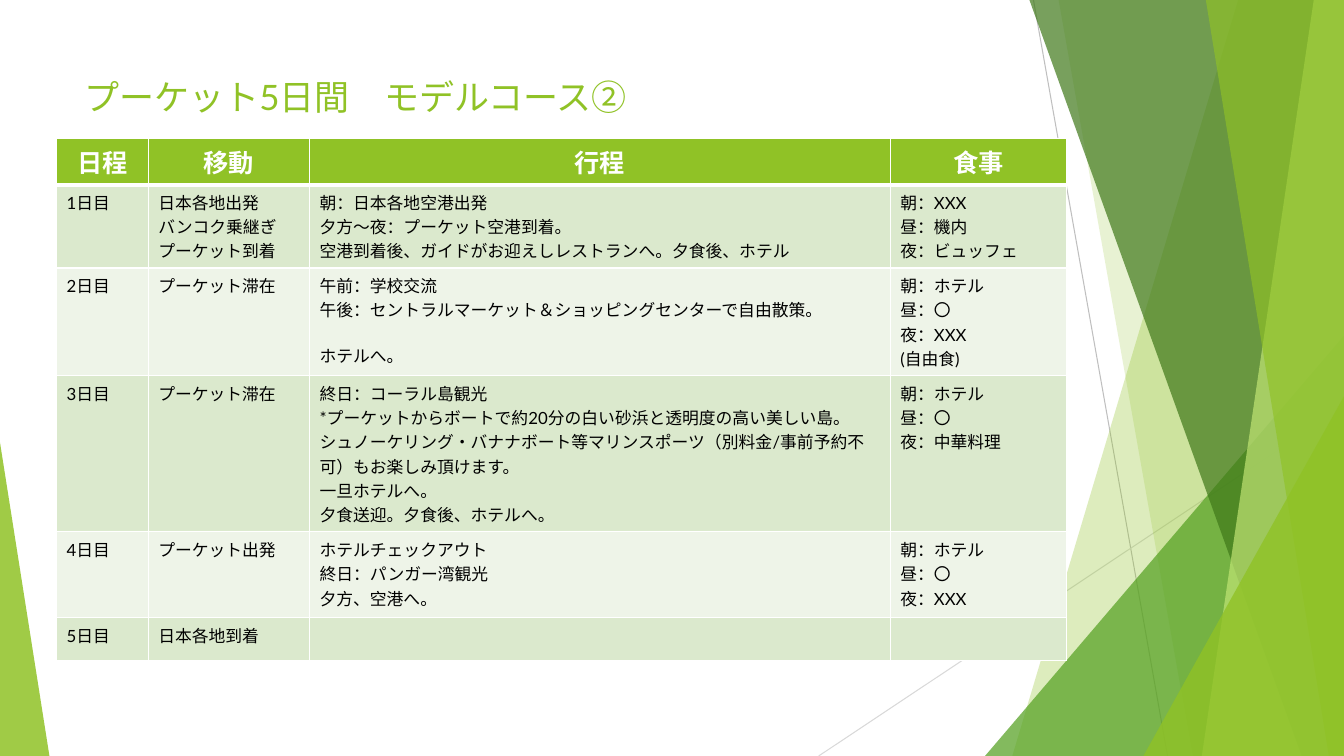
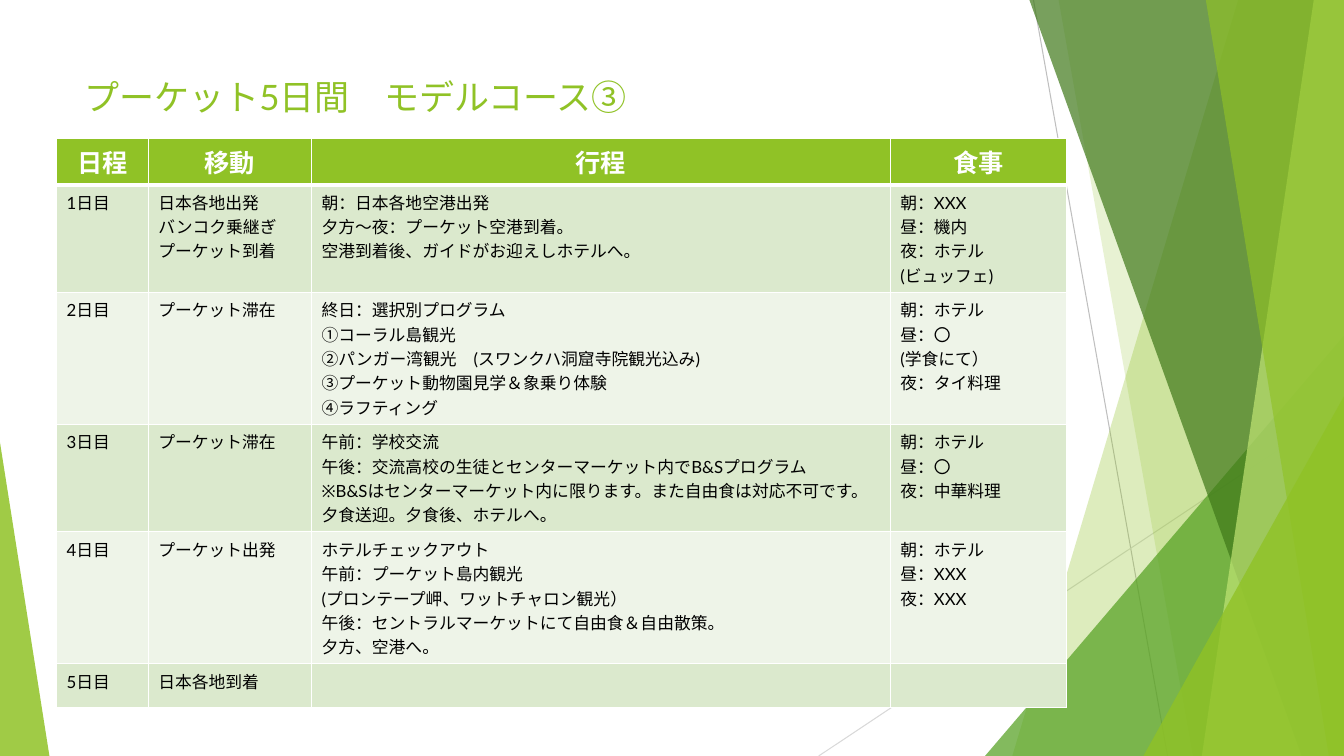
from dataclasses import dataclass

from pptx import Presentation
from pptx.dml.color import RGBColor
from pptx.enum.shapes import MSO_CONNECTOR, MSO_SHAPE
from pptx.enum.text import MSO_ANCHOR, MSO_AUTO_SIZE, PP_ALIGN
from pptx.oxml.ns import qn
from pptx.slide import Slide, SlideLayout
from pptx.util import Emu, Inches, Pt
from lxml import etree

STRAIGHT = MSO_CONNECTOR.STRAIGHT
TRIANGLE = MSO_SHAPE.ISOSCELES_TRIANGLE
MIDDLE = MSO_ANCHOR.MIDDLE
NO_AUTOFIT = MSO_AUTO_SIZE.NONE
LEFT, CENTER = PP_ALIGN.LEFT, PP_ALIGN.CENTER

WHITE = RGBColor(0xFF, 0xFF, 0xFF)
BLACK = RGBColor(0x00, 0x00, 0x00)
LIME = RGBColor(0x90, 0xC2, 0x26)
GREEN = RGBColor(0x54, 0xA0, 0x21)
DARK_GREEN = RGBColor(0x3F, 0x78, 0x19)
PALE_LIME = RGBColor(0xC0, 0xE4, 0x74)
GREY = RGBColor(0xBF, 0xBF, 0xBF)
LIGHT_GREY = RGBColor(0xD9, 0xD9, 0xD9)
ROW_FILLS = (RGBColor(0xDB, 0xE9, 0xCD), RGBColor(0xEE, 0xF4, 0xE8))

FONT = "Lato"
SLIDE_W, SLIDE_H = 13.33, 7.5
TABLE_LEFT, TABLE_TOP = 0.56, 1.37
HEADERS = ("日程", "移動", "行程", "食事")
ROW_HEIGHTS = (0.42, 0.73, 0.75, 0.75, 0.85, 0.43)
GAP = Pt(15)


@dataclass(frozen=True)
class Ray:
    start: tuple[float, float]
    end: tuple[float, float]
    color: RGBColor


@dataclass(frozen=True)
class Band:
    """Full-height band from a slanted left edge to the slide's right edge."""
    top_x: float
    bottom_x: float
    color: RGBColor
    opacity: int


@dataclass(frozen=True)
class Wedge:
    """Right-angled triangle on the slide's bottom edge; apex 0 left, 1 right."""
    left: float
    top: float
    width: float
    apex: int
    color: RGBColor
    opacity: int


@dataclass(frozen=True)
class Day:
    move: str
    plan: str = ""
    meals: str = ""


@dataclass(frozen=True)
class Course:
    title: str
    title_width: float
    columns: tuple[float, ...]
    days: tuple[Day, ...]


BACKDROP = (
    Ray((10.25, 0), (11.58, SLIDE_H), GREY),
    Ray((SLIDE_W, 4.03), (8.12, SLIDE_H), LIGHT_GREY),
    Band(12.28, 10.04, LIME, 30),
    Band(10.5, 11.83, LIME, 20),
    Wedge(9.77, 3.33, 3.56, 1, GREEN, 72),
    Band(10.21, 12.91, DARK_GREEN, 70),
    Band(13.03, 11.92, PALE_LIME, 70),
    Band(11.96, 13.18, LIME, 65),
    Wedge(11.34, 3.93, 1.99, 1, LIME, 80),
    Wedge(0, 4.39, 0.49, 0, LIME, 85),
)

OUTBOUND = "日本各地出発\nバンコク乗継ぎプーケット到着"
STAY = "プーケット滞在"
DEPART = "プーケット出発"
HOME = Day("日本各地到着")
CHINESE_DINNER = "朝：ホテル\n昼：〇\n夜：中華料理"

# A blank line in a text stands for extra space before the next paragraph.
COURSES = (
    Course("プーケット5日間　モデルコース②", 6.43, (0.91, 1.6, 5.76, 1.75), (
        Day(OUTBOUND,
            "朝：日本各地空港出発\n夕方～夜：プーケット空港到着。\n"
            "空港到着後、ガイドがお迎えしレストランへ。夕食後、ホテル",
            "朝：XXX\n昼：機内\n夜：ビュッフェ"),
        Day(STAY,
            "午前：学校交流\n"
            "午後：セントラルマーケット＆ショッピングセンターで自由散策。\n\n"
            "ホテルへ。",
            "朝：ホテル\n昼：〇\n夜：XXX\n(自由食)"),
        Day(STAY,
            "終日：コーラル島観光\n"
            "*プーケットからボートで約20分の白い砂浜と透明度の高い美しい島。\n"
            "シュノーケリング・バナナボート等マリンスポーツ"
            "（別料金/事前予約不可）もお楽しみ頂けます。\n"
            "一旦ホテルへ。\n夕食送迎。夕食後、ホテルへ。",
            CHINESE_DINNER),
        Day(DEPART,
            "ホテルチェックアウト\n終日：パンガー湾観光\n夕方、空港へ。",
            "朝：ホテル\n昼：〇\n夜：XXX"),
        HOME,
    )),
    Course("プーケット5日間　モデルコース③", 9.18, (0.91, 1.62, 5.74, 1.75), (
        Day(OUTBOUND,
            "朝：日本各地空港出発\n夕方～夜：プーケット空港到着。\n"
            "空港到着後、ガイドがお迎えしホテルへ。",
            "朝：XXX\n昼：機内\n夜：ホテル\n(ビュッフェ)"),
        Day(STAY,
            "終日：選択別プログラム\n①コーラル島観光\n"
            "②パンガー湾観光　(スワンクハ洞窟寺院観光込み)\n"
            "③プーケット動物園見学＆象乗り体験\n④ラフティング",
            "朝：ホテル\n昼：〇\n(学食にて）\n夜：タイ料理"),
        Day(STAY,
            "午前：学校交流\n"
            "午後：交流高校の生徒とセンターマーケット内でB&Sプログラム\n"
            "※B&Sはセンターマーケット内に限ります。また自由食は対応不可です。\n"
            "夕食送迎。夕食後、ホテルへ。",
            CHINESE_DINNER),
        Day(DEPART,
            "ホテルチェックアウト\n午前：プーケット島内観光\n"
            "(プロンテープ岬、ワットチャロン観光）\n"
            "午後：セントラルマーケットにて自由食＆自由散策。\n夕方、空港へ。",
            "朝：ホテル\n昼：XXX\n夜：XXX"),
        HOME,
    )),
)


def style_font(font, size: int, color: RGBColor, bold: bool = False) -> None:
    font.name, font.size, font.bold = FONT, Pt(size), bold
    font.color.rgb = color


def tint(sp, color: RGBColor, opacity: int) -> None:
    sp.shadow.inherit = False
    sp.line.fill.background()
    sp.fill.solid()
    sp.fill.fore_color.rgb = color
    clr = sp.element.spPr.find(qn("a:solidFill"))[0]
    etree.SubElement(clr, qn("a:alpha")).set("val", str(opacity * 1000))


def draw_ray(s: Slide, ray: Ray):
    line = s.shapes.add_connector(STRAIGHT, *map(Inches, ray.start + ray.end))
    line.line.color.rgb = ray.color
    line.line.width = Pt(0.75)
    etree.SubElement(line.element.spPr, qn("a:effectLst"))
    return line


def draw_band(s: Slide, band: Band):
    corners = ((SLIDE_W, 0), (SLIDE_W, SLIDE_H), (band.bottom_x, SLIDE_H))
    builder = s.shapes.build_freeform(Inches(band.top_x), 0)
    builder.add_line_segments([(Inches(x), Inches(y)) for x, y in corners])
    sp = builder.convert_to_shape()
    tint(sp, band.color, band.opacity)
    return sp


def draw_wedge(s: Slide, wedge: Wedge):
    sp = s.shapes.add_shape(
        TRIANGLE, Inches(wedge.left), Inches(wedge.top),
        Inches(wedge.width), Inches(SLIDE_H - wedge.top))
    sp.adjustments[0] = wedge.apex
    tint(sp, wedge.color, wedge.opacity)
    return sp


DRAW = {Ray: draw_ray, Band: draw_band, Wedge: draw_wedge}


def add_backdrop(s: Slide, layout: SlideLayout) -> None:
    """Draw the backdrop on a slide, then move it to the shared layout."""
    for number, part in enumerate(BACKDROP, start=101):
        el = DRAW[type(part)](s, part).element
        el.xpath(".//p:cNvPr")[0].set("id", str(number))
        layout.shapes.element.append(el)


def set_title(s: Slide, course: Course) -> None:
    title = s.shapes.title
    title.left, title.top = Inches(0.74), Inches(0.67)
    title.width, title.height = Inches(course.title_width), Inches(0.58)
    tf = title.text_frame
    tf.text = course.title
    tf.auto_size, tf.vertical_anchor = NO_AUTOFIT, MIDDLE
    p = tf.paragraphs[0]
    p.alignment = LEFT
    style_font(p.font, 25, LIME)


def add_borders(cell, bottom: int) -> None:
    tc_pr = cell._tc.get_or_add_tcPr()
    for side, width in (("L", 1), ("R", 1), ("T", 1), ("B", bottom)):
        ln = etree.SubElement(tc_pr, qn(f"a:ln{side}"), w=str(Pt(width)))
        fill = etree.SubElement(ln, qn("a:solidFill"))
        etree.SubElement(fill, qn("a:srgbClr"), val=str(WHITE))


def fill_cell(cell, text: str, row: int) -> None:
    header = row == 0
    add_borders(cell, 3 if header else 1)
    cell.fill.solid()
    cell.fill.fore_color.rgb = LIME if header else ROW_FILLS[(row - 1) % 2]
    tf = cell.text_frame
    p = tf.paragraphs[0]
    for block_no, block in enumerate(text.split("\n\n")):
        for line_no, line in enumerate(block.split("\n")):
            if block_no or line_no:
                p = tf.add_paragraph()
            if block_no and not line_no:
                p.space_before = GAP
            p.text = line
            if header:
                p.alignment = CENTER
                style_font(p.font, 18, WHITE, bold=True)
            else:
                style_font(p.font, 12, BLACK)


def add_itinerary(s: Slide, course: Course) -> None:
    rows = [HEADERS] + [(f"{n}日目", day.move, day.plan, day.meals)
                        for n, day in enumerate(course.days, start=1)]
    table = s.shapes.add_table(
        len(rows), len(HEADERS), Inches(TABLE_LEFT), Inches(TABLE_TOP),
        Inches(sum(course.columns)), Inches(sum(ROW_HEIGHTS))).table
    for column, width in zip(table.columns, course.columns):
        column.width = Inches(width)
    for r, (texts, height) in enumerate(zip(rows, ROW_HEIGHTS)):
        table.rows[r].height = Emu(Inches(height))
        for c, text in enumerate(texts):
            fill_cell(table.cell(r, c), text, r)


def main() -> None:
    prs = Presentation()
    prs.slide_width, prs.slide_height = Inches(SLIDE_W), Inches(SLIDE_H)
    layout = prs.slide_layouts.get_by_name("Title Only")
    slides = [prs.slides.add_slide(layout) for _ in COURSES]
    add_backdrop(slides[0], layout)
    for s, course in zip(slides, COURSES):
        set_title(s, course)
        add_itinerary(s, course)
    prs.save("out.pptx")


if __name__ == "__main__":
    main()
